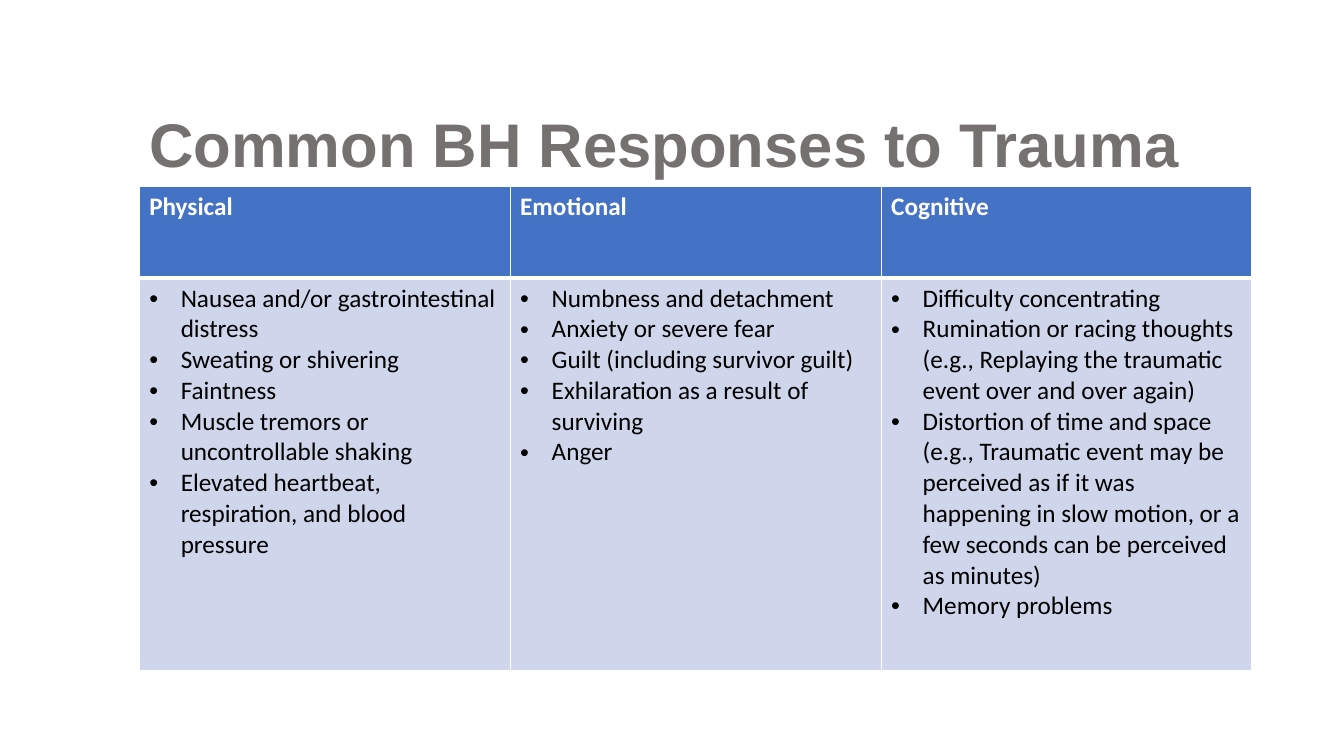
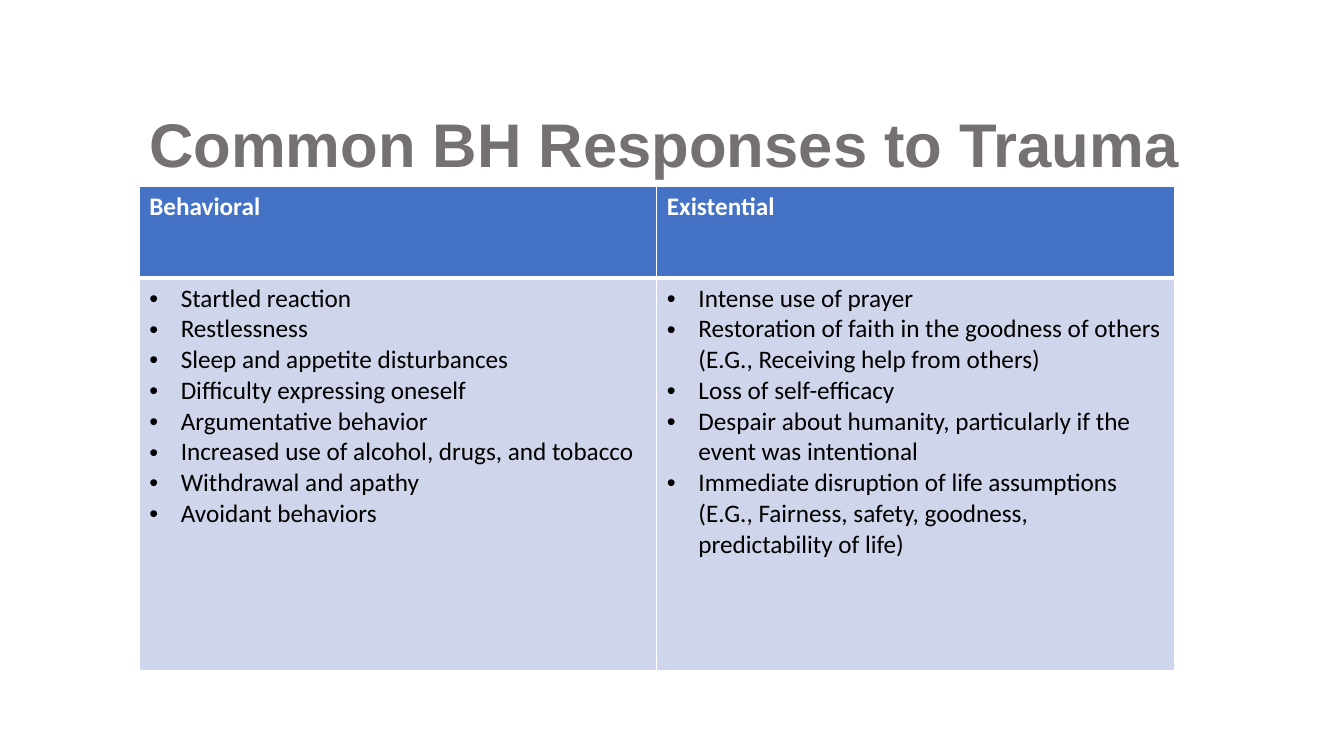
from lxml import etree
from pptx import Presentation
from pptx.dml.color import RGBColor
from pptx.enum.text import MSO_ANCHOR
from pptx.oxml.ns import qn
from pptx.util import Pt

MIDDLE = MSO_ANCHOR.MIDDLE
COLORS = {"title": "767171", "header": "4472C4", "body": "CFD5EA",
          "white": "FFFFFF", "black": "000000"}
LEFT, TITLE_TOP, TITLE_WIDTH, TITLE_HEIGHT = 99.4, 77, 795, 56.2
TABLE_TOP, HEADER_HEIGHT, BODY_HEIGHT = 133.2, 65.5, 280
BULLET_INDENT = 22.5
THIN, THICK = 1, 3
TITLE = "Common BH Responses to Trauma"

RESPONSES = [
    (795, {
        "Physical": [
            "Nausea and/or gastrointestinal distress",
            "Sweating or shivering",
            "Faintness",
            "Muscle tremors or uncontrollable shaking",
            "Elevated heartbeat, respiration, and blood pressure",
        ],
        "Emotional": [
            "Numbness and detachment",
            "Anxiety or severe fear",
            "Guilt (including survivor guilt)",
            "Exhilaration as a result of surviving",
            "Anger",
        ],
        "Cognitive": [
            "Difficulty concentrating",
            "Rumination or racing thoughts (e.g., Replaying the traumatic "
            "event over and over again)",
            "Distortion of time and space (e.g., Traumatic event may be "
            "perceived as if it was happening in slow motion, or a few "
            "seconds can be perceived as minutes)",
            "Memory problems",
        ],
    }),
    (739.6, {
        "Behavioral": [
            "Startled reaction",
            "Restlessness",
            "Sleep and appetite disturbances",
            "Difficulty expressing oneself",
            "Argumentative behavior",
            "Increased use of alcohol, drugs, and tobacco",
            "Withdrawal and apathy",
            "Avoidant behaviors",
        ],
        "Existential": [
            "Intense use of prayer",
            "Restoration of faith in the goodness of others (E.G., Receiving "
            "help from others)",
            "Loss of self-efficacy",
            "Despair about humanity, particularly if the event was intentional",
            "Immediate disruption of life assumptions (E.G., Fairness, safety, "
            "goodness, predictability of life)",
        ],
    }),
]


def rgb(color):
    return RGBColor.from_string(COLORS[color])


def write(frame, lines, *, color, size=18, font="Calibri", bold=False,
          bullet=False, spacing=None):
    for index, line in enumerate(lines):
        paragraph = frame.add_paragraph() if index else frame.paragraphs[0]
        if bullet:
            properties = paragraph._p.get_or_add_pPr()
            properties.set("marL", str(Pt(BULLET_INDENT)))
            properties.set("indent", str(-Pt(BULLET_INDENT)))
            etree.SubElement(properties, qn("a:buFont"), typeface="Arial")
            etree.SubElement(properties, qn("a:buChar"), char="•")
        if spacing:
            paragraph.line_spacing = spacing
        run = paragraph.add_run()
        run.text = line
        run.font.name = font
        run.font.size = Pt(size)
        run.font.bold = bold
        run.font.color.rgb = rgb(color)


class Deck:
    """Holds the presentation, its shared style and the current slide."""

    def __init__(self):
        self.presentation = Presentation()
        self.presentation.slide_width = Pt(960)
        self.presentation.slide_height = Pt(540)
        self.slide = None

    def add_slide(self):
        self.slide = self.presentation.slides.add_slide(
            self.presentation.slide_layouts[6])

    def title(self, text):
        heading = self.slide.shapes.add_textbox(
            Pt(LEFT), Pt(TITLE_TOP), Pt(TITLE_WIDTH), Pt(TITLE_HEIGHT))
        frame = heading.text_frame
        frame.word_wrap = True
        frame.vertical_anchor = MIDDLE
        write(frame, [text], color="title", size=44, font="Arial", bold=True,
              spacing=0.9)

    def cell(self, cell, fill, top, bottom):
        properties = cell._tc.get_or_add_tcPr()
        for side, width in (("L", THIN), ("R", THIN), ("T", top), ("B", bottom)):
            border = etree.SubElement(properties, qn(f"a:ln{side}"), w=str(Pt(width)))
            paint = etree.SubElement(border, qn("a:solidFill"))
            etree.SubElement(paint, qn("a:srgbClr"), val=COLORS["white"])
        cell.fill.solid()
        cell.fill.fore_color.rgb = rgb(fill)

    def response_table(self, width, responses):
        table = self.slide.shapes.add_table(
            2, len(responses), Pt(LEFT), Pt(TABLE_TOP), Pt(width),
            Pt(HEADER_HEIGHT + BODY_HEIGHT)).table
        table.horz_banding = False
        table.rows[0].height = Pt(HEADER_HEIGHT)
        table.rows[1].height = Pt(BODY_HEIGHT)
        for column, (category, symptoms) in enumerate(responses.items()):
            table.columns[column].width = Pt(width / len(responses))
            header, body = table.cell(0, column), table.cell(1, column)
            self.cell(header, "header", THIN, THICK)
            write(header.text_frame, [category], color="white", bold=True)
            self.cell(body, "body", THICK, THIN)
            write(body.text_frame, symptoms, color="black", bullet=True)

    def save(self):
        self.presentation.save("out.pptx")


def main():
    deck = Deck()
    for width, responses in RESPONSES:
        deck.add_slide()
        deck.title(TITLE)
        deck.response_table(width, responses)
    deck.save()


if __name__ == "__main__":
    main()
